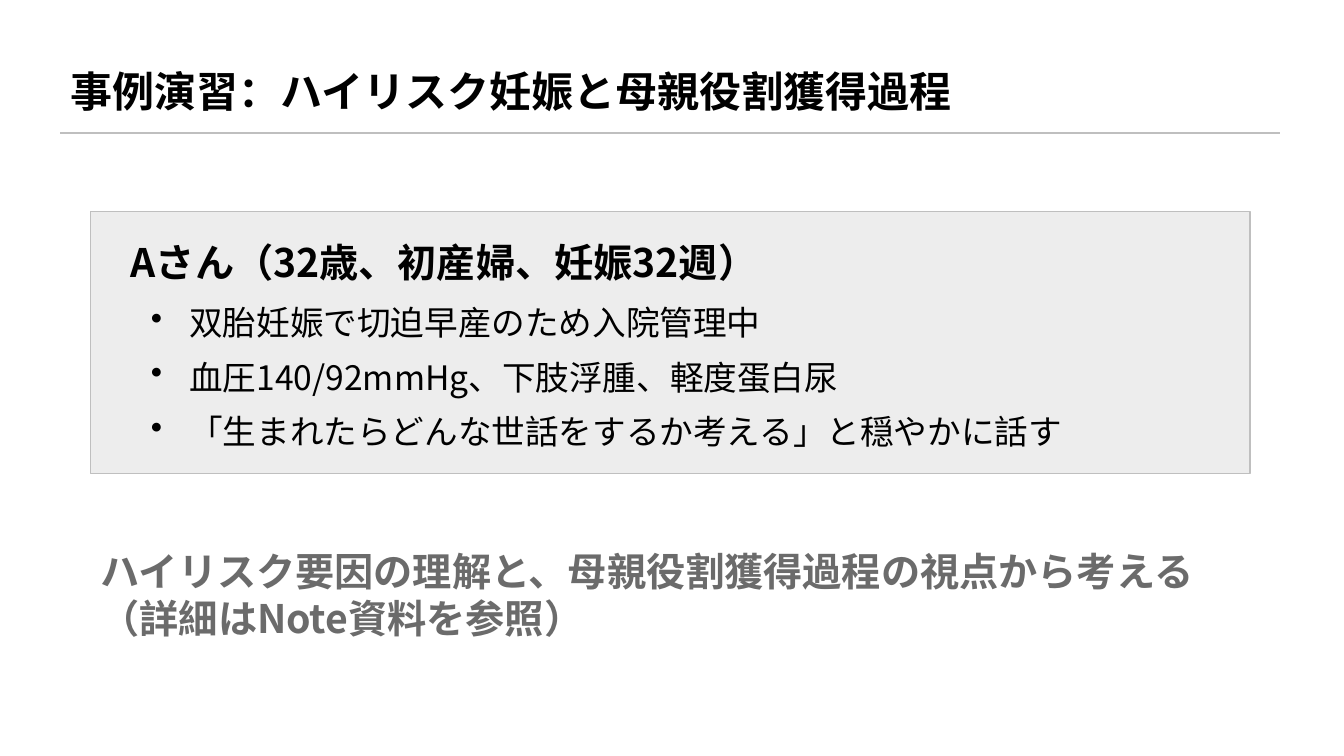
from lxml import etree
from pptx import Presentation
from pptx.dml.color import RGBColor
from pptx.enum import shapes, text
from pptx.oxml import ns
from pptx.util import Pt

COLORS = {"ink": "000000", "grey": "6B6B6B", "panel": "EDEDED", "rule": "BFBFBF"}
FONT = "Noto Sans CJK JP"
HANGING = Pt(27.36)

TITLE = "事例演習：ハイリスク妊娠と母親役割獲得過程"
PATIENT = "Aさん（32歳、初産婦、妊娠32週）"
FINDINGS = [
    "双胎妊娠で切迫早産のため入院管理中",
    "血圧140/92mmHg、下肢浮腫、軽度蛋白尿",
    "「生まれたらどんな世話をするか考える」と穏やかに話す",
]
TASK = "ハイリスク要因の理解と、母親役割獲得過程の視点から考える（詳細はNote資料を参照）"


def color(name):
    return RGBColor.from_string(COLORS[name])


def add_bullet(paragraph):
    properties = paragraph._p.get_or_add_pPr()
    properties.set("marL", str(HANGING))
    properties.set("indent", str(-HANGING))
    etree.SubElement(properties, ns.qn("a:buChar"), char="•")
    paragraph.space_after = Pt(10)


def format_run(run, size, bold, color_name):
    values = {"name": FONT, "size": Pt(size), "bold": bold}
    for attribute, value in values.items():
        setattr(run.font, attribute, value)
    run.font.color.rgb = color(color_name)
    # Japanese glyphs take the East Asian typeface
    etree.SubElement(run._r.get_or_add_rPr(), ns.qn("a:ea"), typeface=FONT)


def add_text(slide, box, lines, size, bold=True, color_name="ink",
             anchor=text.MSO_ANCHOR.MIDDLE, bullets=False):
    frame = slide.shapes.add_textbox(*map(Pt, box)).text_frame
    frame.word_wrap = True
    frame.vertical_anchor = anchor
    for index, line in enumerate(lines):
        paragraph = frame.add_paragraph() if index else frame.paragraphs[0]
        if bullets:
            add_bullet(paragraph)
        run = paragraph.add_run()
        run.text = line
        format_run(run, size, bold, color_name)


def style_line(line):
    line.color.rgb = color("rule")
    line.width = Pt(1)


def add_rule(slide, left, right, top):
    rule = slide.shapes.add_connector(
        shapes.MSO_CONNECTOR.STRAIGHT, Pt(left), Pt(top), Pt(right), Pt(top))
    style_line(rule.line)
    etree.SubElement(rule._element.spPr, ns.qn("a:effectLst"))


def add_panel(slide, box):
    panel = slide.shapes.add_shape(shapes.MSO_SHAPE.RECTANGLE, *map(Pt, box))
    panel.shadow.inherit = False
    panel.fill.solid()
    panel.fill.fore_color.rgb = color("panel")
    style_line(panel.line)


def main():
    presentation = Presentation()
    presentation.slide_width, presentation.slide_height = Pt(960), Pt(540)
    slide = presentation.slides.add_slide(presentation.slide_layouts[6])

    add_text(slide, (43.2, 32.4, 871.2, 64.8), [TITLE], 30)
    add_rule(slide, 43.2, 914.4, 95.04)
    add_panel(slide, (64.8, 151.2, 828, 187.2))
    add_text(slide, (86.4, 165.6, 792, 43.2), [PATIENT], 28)
    add_text(slide, (100.8, 212.4, 770.4, 108), FINDINGS, 24, bold=False,
             anchor=text.MSO_ANCHOR.TOP, bullets=True)
    add_text(slide, (64.8, 403.2, 813.6, 43.2), [TASK], 28, color_name="grey")

    presentation.save("out.pptx")


if __name__ == "__main__":
    main()
